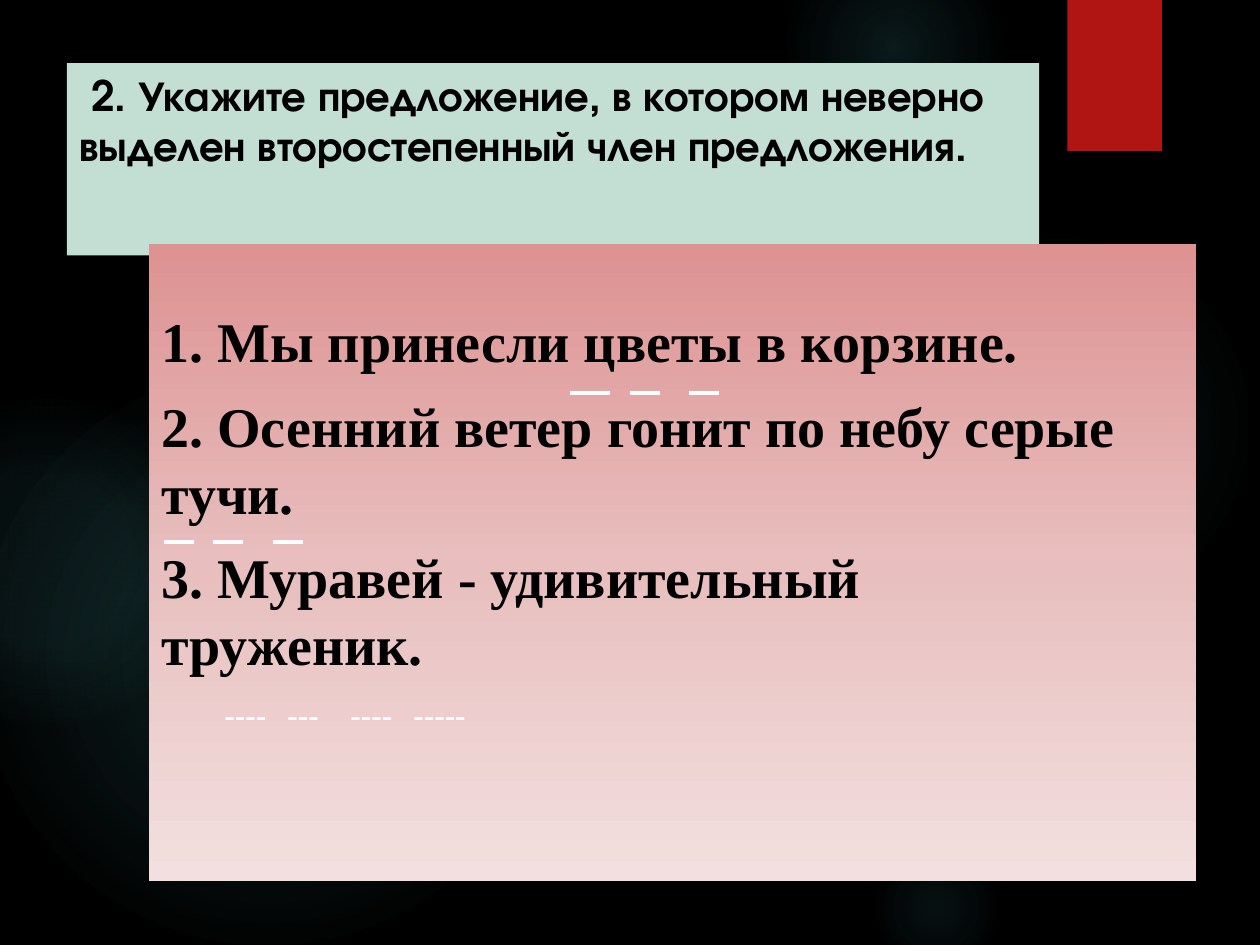
import pptx
import pptx.dml.color
import pptx.enum.shapes
import pptx.enum.text
import pptx.oxml
import pptx.oxml.ns
import pptx.util
from dataclasses import dataclass

Pt = pptx.util.Pt
MSO = pptx.enum.shapes.MSO_SHAPE
TEXT = pptx.enum.text


@dataclass(frozen=True)
class Theme:
    back: str = "000000"
    ink: str = "000000"
    mark: str = "FFFFFF"
    head: str = "C3DED3"
    tab: str = "B01513"
    glow: str = "50B9C1"
    fade: tuple = ((0, "DE9292", 100), (50, "E8BEBE", 100), (100, "F3DFDF", 100))
    sans: str = "TeX Gyre Adventor"
    serif: str = "Times New Roman"
    big: int = 32
    mid: int = 24
    small: int = 18


def tint(code):
    return pptx.dml.color.RGBColor.from_string(code)


def apply(item, form):
    for name, value in form.items():
        setattr(item, name, value)


class Page:
    def __init__(self, deck, theme):
        self.theme = theme
        self.slide = deck.slides.add_slide(deck.slide_layouts[1])
        self.paint(self.slide.background, theme.back)

    def paint(self, item, code):
        item.fill.solid()
        item.fill.fore_color.rgb = tint(code)

    def blend(self, shape, stops, shade):
        """Swap a solid fill for a gradient of (place, colour, opacity) stops."""
        self.paint(shape, stops[0][1])
        marks = "".join(
            f'<a:gs pos="{place * 1000}"><a:srgbClr val="{code}">'
            f'<a:alpha val="{alpha * 1000}"/></a:srgbClr></a:gs>'
            for place, code, alpha in stops)
        space = pptx.oxml.ns.nsdecls("a")
        grad = pptx.oxml.parse_xml(
            f'<a:gradFill {space} rotWithShape="1"><a:gsLst>{marks}</a:gsLst>{shade}</a:gradFill>')
        form = shape.element.spPr
        form.replace(form.find(pptx.oxml.ns.qn("a:solidFill")), grad)

    def shape(self, kind, *box):
        item = self.slide.shapes.add_shape(kind, *map(Pt, box))
        item.shadow.inherit = False
        item.line.fill.background()
        return item

    def orb(self, left, top, size, stops):
        item = self.shape(MSO.OVAL, left, top, size, size)
        self.blend(item, [(place, self.theme.glow, alpha) for place, alpha in stops],
                   '<a:path path="circle"><a:fillToRect l="50000" t="50000" '
                   'r="50000" b="50000"/></a:path>')

    def block(self, left, top, width, height, code):
        self.paint(self.shape(MSO.RECTANGLE, left, top, width, height), code)

    def holder(self, item, box, inset):
        apply(item, dict(zip(("left", "top", "width", "height"), map(Pt, box))))
        frame = item.text_frame
        apply(frame, {"word_wrap": True, "auto_size": TEXT.MSO_AUTO_SIZE.NONE,
                      "vertical_anchor": TEXT.MSO_ANCHOR.TOP, "margin_top": Pt(inset)})
        # Bring in front of the backdrop
        item.element.getparent().append(item.element)
        return frame

    def phrase(self, para, text, font, code, form, indent=0, tabs=()):
        para.text = text
        apply(para, {"alignment": TEXT.PP_ALIGN.LEFT, **form})
        for run in para.runs:
            apply(run.font, {"bold": True, **font})
            run.font.color.rgb = tint(code)
        props = para._p.get_or_add_pPr()
        props.set("marL", "0")
        props.set("indent", str(Pt(indent)))
        space = pptx.oxml.ns.nsdecls("a")
        props.append(pptx.oxml.parse_xml(f"<a:buNone {space}/>"))
        if tabs:
            stops = "".join(f'<a:tab pos="{Pt(stop)}" algn="l"/>' for stop in tabs)
            props.append(pptx.oxml.parse_xml(f"<a:tabLst {space}>{stops}</a:tabLst>"))

    def dash(self, left, top, width):
        line = self.slide.shapes.add_connector(
            pptx.enum.shapes.MSO_CONNECTOR.STRAIGHT,
            Pt(left), Pt(top), Pt(left + width), Pt(top))
        line.line.width = Pt(2.25)
        line.line.color.rgb = tint(self.theme.mark)
        line.element.spPr.append(
            pptx.oxml.parse_xml(f'<a:effectLst {pptx.oxml.ns.nsdecls("a")}/>'))


def main():
    deck = pptx.Presentation()
    deck.slide_width, deck.slide_height = Pt(720), Pt(540)
    theme = Theme()
    page = Page(deck, theme)

    # Backdrop: soft glows and the red tab
    for left, top, size, stops in (
            (496, 132, 222, ((0, 7), (36, 6), (69, 0))),
            (448, -36, 126, ((0, 14), (36, 7), (73, 0))),
            (496, 480, 78, ((0, 9), (36, 5), (66, 0))),
            (-12, 210, 330, ((0, 11), (36, 10), (75, 0))),
            (-66, 228, 186, ((0, 8), (36, 8), (72, 0)))):
        page.orb(left, top, size, stops)
    page.block(610, 0, 54, 86.4, theme.tab)

    # Question
    title = page.slide.shapes.title
    page.paint(title, theme.head)
    frame = page.holder(title, (38.2, 36, 555.6, 110), 3.6)
    page.phrase(frame.paragraphs[0],
                "2. Укажите предложение, в котором неверно "
                "выделен второстепенный член предложения.",
                {"name": theme.sans, "size": Pt(theme.mid)}, theme.ink, {}, indent=6.7)

    # Answers
    body = page.slide.placeholders[1]
    page.blend(body, theme.fade, '<a:lin ang="5400000" scaled="0"/>')
    frame = page.holder(body, (85, 139.6, 598.4, 363.8), 35.8)
    serif = {"name": theme.serif, "size": Pt(theme.big)}
    for rank, text in enumerate((
            "1. Мы принесли цветы в корзине.",
            "2. Осенний ветер гонит по небу серые тучи.",
            "3. Муравей - удивительный\vтруженик.")):
        para = frame.add_paragraph() if rank else frame.paragraphs[0]
        page.phrase(para, text, serif, theme.ink,
                    {"space_before": Pt(10 if rank else 0), "line_spacing": Pt(38.3)})
    page.phrase(frame.add_paragraph(), "\t----\t---\t----\t-----",
                {**serif, "size": Pt(theme.small)}, theme.mark,
                {"space_before": Pt(10)}, tabs=(9, 51, 82.3, 119.5))

    # Dashed marks under the words
    for top, marks in ((224.6, ((326, 22.5), (360, 17), (394, 17))),
                       (309.6, ((93.6, 17), (121.8, 17), (156, 17)))):
        for left, width in marks:
            page.dash(left, top, width)

    deck.save("out.pptx")


if __name__ == "__main__":
    main()
